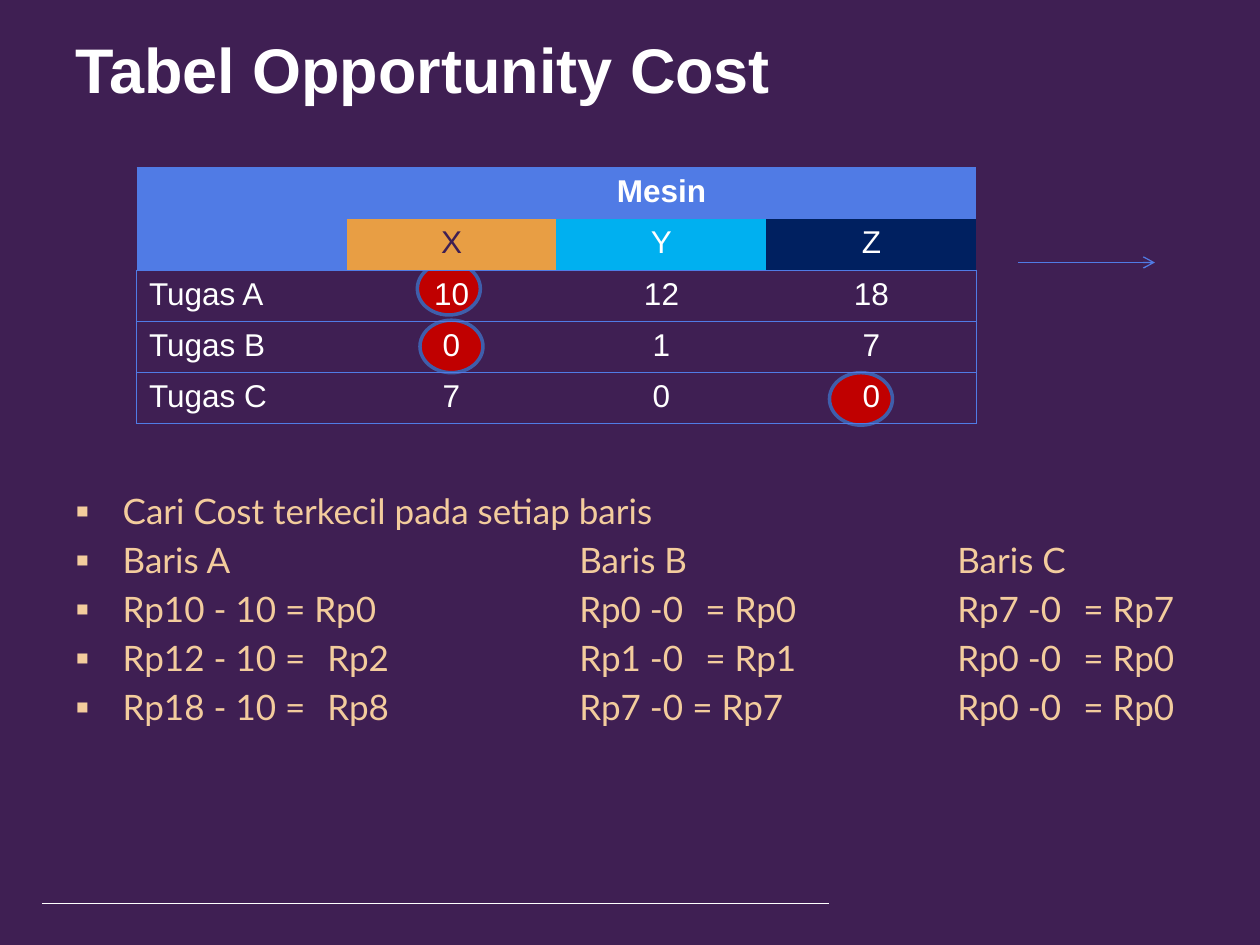
from lxml import etree
from pptx import Presentation
from pptx.dml.color import RGBColor
from pptx.enum.shapes import MSO_CONNECTOR, MSO_SHAPE
from pptx.enum.text import MSO_ANCHOR, PP_ALIGN
from pptx.oxml.ns import qn
from pptx.util import Pt

PURPLE = RGBColor(0x3F, 0x1F, 0x53)
WHITE = RGBColor(0xFF, 0xFF, 0xFF)
SAND = RGBColor(0xF3, 0xCC, 0x9D)
BLUE = RGBColor(0x50, 0x7B, 0xE5)
ORANGE = RGBColor(0xE8, 0x9E, 0x44)
SKY = RGBColor(0x00, 0xB0, 0xF0)
NAVY = RGBColor(0x00, 0x20, 0x60)
RED = RGBColor(0xC0, 0x00, 0x00)
OUTLINE = RGBColor(0x3F, 0x5E, 0xAB)

NO_STYLE = "{2D5ABB26-0587-4C30-8999-92F81FD0307C}"


def add_xml(parent, tag, **attributes):
    values = {name: str(value) for name, value in attributes.items()}
    return etree.SubElement(parent, qn(tag), values)


class SlideBuilder:
    heading_font = "Arial"
    body_font = "Lato"
    border = 0.75

    def __init__(self, slide):
        self.slide = slide
        slide.background.fill.solid()
        slide.background.fill.fore_color.rgb = PURPLE

    def style(self, paragraph, font, size, color, bold=False):
        for run in paragraph.runs:
            run.font.name = font
            run.font.size = Pt(size)
            run.font.color.rgb = color
            run.font.bold = bold

    def frame(self, left, top, width, height):
        box = self.slide.shapes.add_textbox(Pt(left), Pt(top), Pt(width), Pt(height))
        box.text_frame.word_wrap = True
        return box.text_frame

    def title(self, text, left, top, width, height):
        frame = self.frame(left, top, width, height)
        frame.vertical_anchor = MSO_ANCHOR.MIDDLE
        frame.text = text
        self.style(frame.paragraphs[0], self.heading_font, 36, WHITE, True)

    def bullets(self, lines, tab_stops, left, top, width, height):
        frame = self.frame(left, top, width, height)
        for index, line in enumerate(lines):
            paragraph = frame.add_paragraph() if index else frame.paragraphs[0]
            paragraph.text = line
            if index:
                paragraph.space_before = Pt(4)
            properties = paragraph._p.get_or_add_pPr()
            properties.set("marL", str(Pt(27)))
            properties.set("indent", str(Pt(-27)))
            bullet_color = add_xml(properties, "a:buClr")
            add_xml(bullet_color, "a:srgbClr", val=SAND)
            add_xml(properties, "a:buSzPct", val=115000)
            add_xml(properties, "a:buFont", typeface=self.heading_font)
            add_xml(properties, "a:buChar", char="▪")
            tabs = add_xml(properties, "a:tabLst")
            for stop in tab_stops:
                add_xml(tabs, "a:tab", pos=Pt(stop), algn="l")
            self.style(paragraph, self.body_font, 20, SAND)

    def marker(self, left, top):
        oval = self.slide.shapes.add_shape(
            MSO_SHAPE.OVAL, Pt(left), Pt(top), Pt(36), Pt(30))
        oval.shadow.inherit = False
        oval.fill.solid()
        oval.fill.fore_color.rgb = RED
        oval.line.color.rgb = OUTLINE
        oval.line.width = Pt(2)

    def line(self, left, right, y, color, width, arrow=False):
        connector = self.slide.shapes.add_connector(
            MSO_CONNECTOR.STRAIGHT, Pt(left), Pt(y), Pt(right), Pt(y))
        connector.line.color.rgb = color
        connector.line.width = Pt(width)
        if arrow:
            add_xml(connector.line._get_or_add_ln(), "a:tailEnd", type="arrow")
        add_xml(connector._element.spPr, "a:effectLst")

    def cell(self, cell, text, fill=None, color=WHITE, bold=False, centred=True, sides=""):
        cell.text = text
        paragraph = cell.text_frame.paragraphs[0]
        paragraph.alignment = PP_ALIGN.CENTER if centred else PP_ALIGN.LEFT
        self.style(paragraph, self.heading_font, 18, color, bold)
        properties = cell._tc.get_or_add_tcPr()
        for side in sides:
            edge = add_xml(properties, f"a:ln{side}", w=Pt(self.border))
            add_xml(add_xml(edge, "a:solidFill"), "a:srgbClr", val=BLUE)
        if fill is None:
            cell.fill.background()
        else:
            cell.fill.solid()
            cell.fill.fore_color.rgb = fill

    def cost_table(self, heading, machines, tasks, left, top, width, height):
        rows, columns = len(tasks) + 2, len(machines) + 1
        shape = self.slide.shapes.add_table(
            rows, columns, Pt(left), Pt(top), Pt(width), Pt(height))
        table = shape.table
        table.first_row = table.horz_banding = False
        table._tbl.tblPr.find(qn("a:tableStyleId")).text = NO_STYLE

        # Header rows
        for column in range(columns):
            self.cell(table.cell(0, column), heading if column == 1 else "",
                      BLUE, bold=True, sides="T")
        self.cell(table.cell(1, 0), "", BLUE)
        for column, (name, fill, color) in enumerate(machines, 1):
            self.cell(table.cell(1, column), name, fill, color, sides="B")
        table.cell(0, 0).merge(table.cell(1, 0))
        table.cell(0, 1).merge(table.cell(0, columns - 1))

        # Task rows
        for row, values in enumerate(tasks, 2):
            for column, value in enumerate(values):
                sides = ("L" if column == 0 else "") + ("R" if column == columns - 1 else "")
                self.cell(table.cell(row, column), value, centred=column > 0,
                          sides=sides + "TB")


def main():
    presentation = Presentation()
    presentation.slide_width, presentation.slide_height = Pt(720), Pt(540)
    builder = SlideBuilder(presentation.slides.add_slide(presentation.slide_layouts[6]))

    # Footer rule
    builder.line(24, 474, 516, WHITE, 0.5)

    # Smallest cost markers, behind the table
    for left, top in ((238.5, 150), (240, 183), (474, 213)):
        builder.marker(left, top)

    builder.title("Tabel Opportunity Cost", 36, 21, 573, 36)

    # Steps, with the three rows side by side
    builder.bullets(
        ["Cari Cost terkecil pada setiap baris",
         "Baris A\t\tBaris B\t\tBaris C",
         "Rp10 - 10 = Rp0\tRp0 -0\t= Rp0\tRp7 -0\t= Rp7",
         "Rp12 - 10 =\tRp2\tRp1 -0\t= Rp1\tRp0 -0\t= Rp0",
         "Rp18 - 10 =\tRp8\tRp7 -0 = Rp7\tRp0 -0\t= Rp0"],
        [144, 288, 360, 504, 576], 36, 276, 648, 228)

    # Opportunity cost table
    builder.cost_table(
        "Mesin",
        [("X", ORANGE, PURPLE), ("Y", SKY, WHITE), ("Z", NAVY, WHITE)],
        [("Tugas A", "10", "12", "18"),
         ("Tugas B", "0", "1", "7"),
         ("Tugas C", "7", "0", "0")],
        78, 96, 480, 146)

    # Arrow to the next step
    builder.line(582, 660, 150, BLUE, 0.75, arrow=True)

    presentation.save("out.pptx")


if __name__ == "__main__":
    main()
